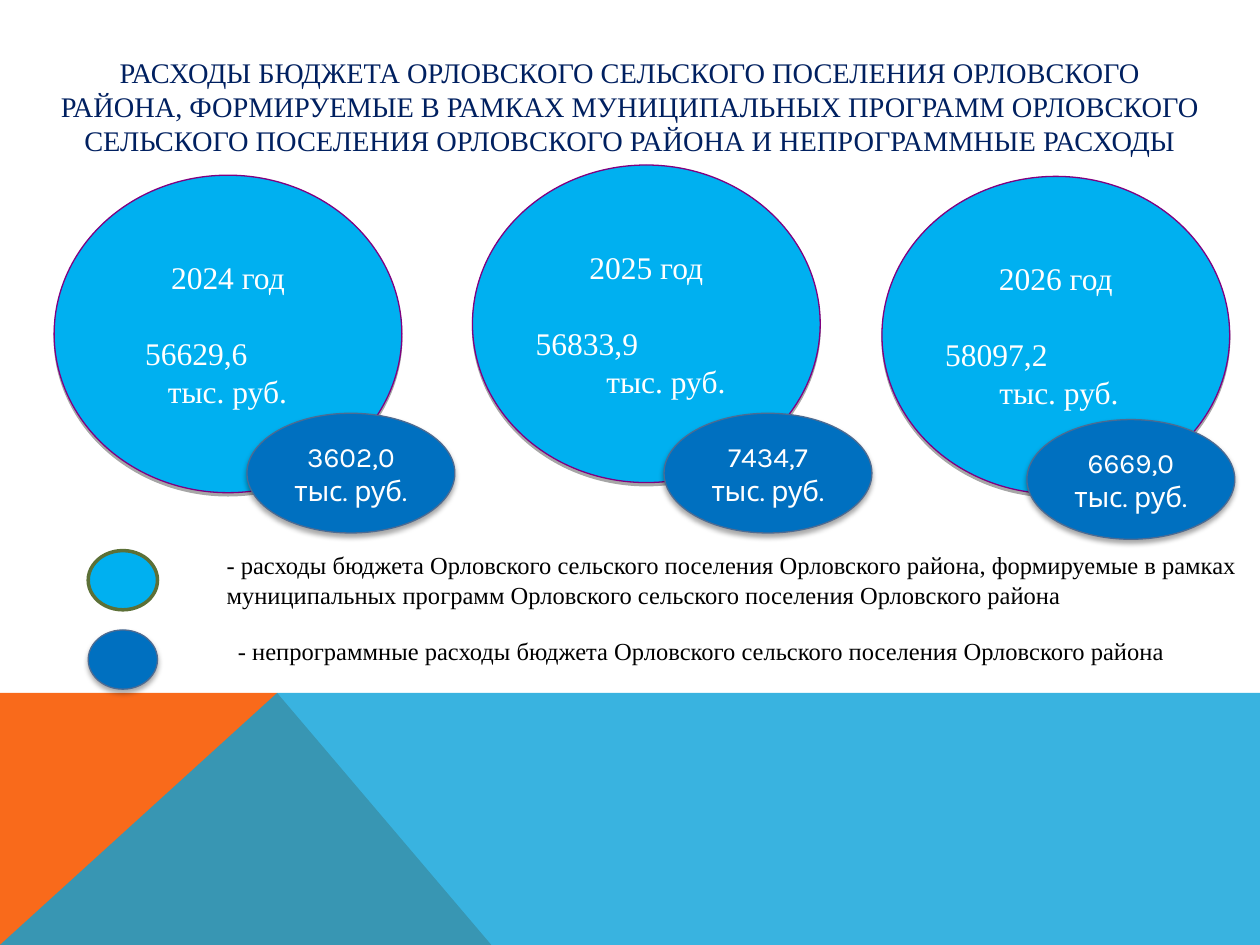
from dataclasses import dataclass

import lxml.etree
import pptx
import pptx.dml.color
import pptx.enum.shapes
import pptx.enum.text
import pptx.oxml.ns
import pptx.util

COLUMNS, ROWS = 100, 75
ALIGN = pptx.enum.text.PP_ALIGN
ANCHOR = pptx.enum.text.MSO_ANCHOR


@dataclass(frozen=True)
class Theme:
    serif: str = "Times New Roman"
    sans: str = "Karla"
    title_size: float = 16.2
    year_size: float = 18
    other_size: float = 16
    legend_size: float = 14
    title: str = "002060"
    white: str = "FFFFFF"
    black: str = "000000"
    program: str = "00B0F0"
    program_line: str = "800080"
    program_key_line: str = "5C7037"
    other: str = "0070C0"
    other_line: str = "4D6B92"
    orange: str = "F96A1B"
    band: str = "08A1D9"


def rgb(color):
    return pptx.dml.color.RGBColor.from_string(color)


class BudgetSlide:
    """Draws on one slide; lengths are cells of a 100 by 75 grid."""

    def __init__(self, deck, theme):
        self.theme = theme
        self.cell = deck.slide_width // COLUMNS
        self.slide = deck.slides.add_slide(deck.slide_layouts[6])

    def box(self, *cells):
        return [round(value * self.cell) for value in cells]

    def polygon(self, points, color, opacity=100):
        builder = self.slide.shapes.build_freeform(*points[0], scale=self.cell)
        builder.add_line_segments(points[1:], close=True)
        area = builder.convert_to_shape()
        area.shadow.inherit = False
        area.fill.solid()
        area.fill.fore_color.rgb = rgb(color)
        area.line.fill.background()
        if opacity < 100:
            qn = pptx.oxml.ns.qn
            tint = area._element.spPr.find(f"{qn('a:solidFill')}/{qn('a:srgbClr')}")
            lxml.etree.SubElement(tint, qn("a:alpha"), val=str(opacity * 1000))

    def ellipse(self, cells, color, line, width=0.75, blur=None):
        oval = self.slide.shapes.add_shape(
            pptx.enum.shapes.MSO_SHAPE.OVAL, *self.box(*cells))
        oval.fill.solid()
        oval.fill.fore_color.rgb = rgb(color)
        oval.line.color.rgb = rgb(line)
        oval.line.width = pptx.util.Pt(width)
        oval.shadow.inherit = False
        if blur is not None:
            self.drop_shadow(oval, blur)
        return oval

    def drop_shadow(self, oval, blur):
        qn = pptx.oxml.ns.qn
        effects = oval._element.spPr.find(qn("a:effectLst"))
        shadow = lxml.etree.SubElement(
            effects, qn("a:outerShdw"), blurRad=str(pptx.util.Pt(blur)),
            dist=str(pptx.util.Pt(1.8)), dir="5400000", rotWithShape="0")
        tint = lxml.etree.SubElement(shadow, qn("a:srgbClr"), val=self.theme.black)
        lxml.etree.SubElement(tint, qn("a:alpha"), val="35000")

    def fill_text(self, holder, text, size, color, font, align, anchor):
        frame = holder.text_frame
        frame.word_wrap = True
        frame.vertical_anchor = anchor
        frame.text = text
        for paragraph in frame.paragraphs:
            paragraph.alignment = align
            for run in paragraph.runs:
                run.font.size = pptx.util.Pt(size)
                run.font.name = font
                run.font.color.rgb = rgb(color)
        return frame.paragraphs

    def text(self, cells, text, size, color, align=ALIGN.LEFT, anchor=ANCHOR.TOP):
        holder = self.slide.shapes.add_textbox(*self.box(*cells))
        self.fill_text(holder, text, size, color, self.theme.serif, align, anchor)

    def program_circle(self, left, top, year, amount, amount_indent, unit_indent):
        theme = self.theme
        circle = self.ellipse((left, top, 27.6, 25.2), theme.program,
                              theme.program_line, blur=0)
        _, value, unit = self.fill_text(
            circle, f"{year} год\n{amount}\nтыс. руб.", theme.year_size,
            theme.white, theme.serif, ALIGN.CENTER, ANCHOR.MIDDLE)
        value.space_before = pptx.util.Pt(22)
        for line, indent in ((value, amount_indent), (unit, unit_indent)):
            line.alignment = ALIGN.LEFT
            line._p.get_or_add_pPr().set("marL", str(round(indent * self.cell)))

    def other_circle(self, left, top, amount):
        theme = self.theme
        circle = self.ellipse((left, top, 16.5, 9.5), theme.other,
                              theme.other_line, blur=3.1)
        self.fill_text(circle, f"{amount} тыс. руб.", theme.other_size,
                       theme.white, theme.sans, ALIGN.CENTER, ANCHOR.MIDDLE)


def main():
    deck = pptx.Presentation()
    deck.slide_width = pptx.util.Inches(10)
    deck.slide_height = pptx.util.Inches(7.5)
    theme = Theme()
    page = BudgetSlide(deck, theme)

    # Coloured foot of the slide
    foot, peak = 55.2, 22.3
    page.polygon([(0, ROWS), (0, foot), (peak, foot), (39.1, ROWS)], theme.orange)
    page.polygon([(0, ROWS), (peak, foot), (COLUMNS, foot), (COLUMNS, ROWS)],
                 theme.band, opacity=80)

    # Title
    page.text((3.5, 2.9, 92.9, 11),
              "РАСХОДЫ БЮДЖЕТА ОРЛОВСКОГО СЕЛЬСКОГО ПОСЕЛЕНИЯ ОРЛОВСКОГО РАЙОНА, "
              "ФОРМИРУЕМЫЕ В РАМКАХ МУНИЦИПАЛЬНЫХ ПРОГРАММ ОРЛОВСКОГО СЕЛЬСКОГО "
              "ПОСЕЛЕНИЯ ОРЛОВСКОГО РАЙОНА И НЕПРОГРАММНЫЕ РАСХОДЫ",
              theme.title_size, theme.title, ALIGN.CENTER, ANCHOR.MIDDLE)

    # Spending by year: left, top, year, amount, indents of amount and unit
    for program in ((4.3, 13.9, 2024, "56629,6", 2.2, 4),
                    (37.5, 13.1, 2025, "56833,9", 0, 5.6),
                    (70, 14, 2026, "58097,2", 0, 4.3)):
        page.program_circle(*program)
    for other in ((19.6, 32.8, "3602,0"), (52.7, 32.8, "7434,7"),
                  (81.5, 33.3, "6669,0")):
        page.other_circle(*other)

    # Legend
    page.ellipse((7, 43.7, 5.5, 4.7), theme.program, theme.program_key_line, width=2)
    page.ellipse((7, 50, 5.5, 4.7), theme.other, theme.other_line, blur=3.1)
    page.text((17, 43.2, 83, 5.7),
              "- расходы бюджета Орловского сельского поселения Орловского района, "
              "формируемые в рамках муниципальных программ Орловского сельского "
              "поселения Орловского района", theme.legend_size, theme.black)
    page.text((17.9, 50, 79.5, 3.4),
              "- непрограммные расходы бюджета Орловского сельского поселения "
              "Орловского района", theme.legend_size, theme.black)

    deck.save("out.pptx")


if __name__ == "__main__":
    main()
